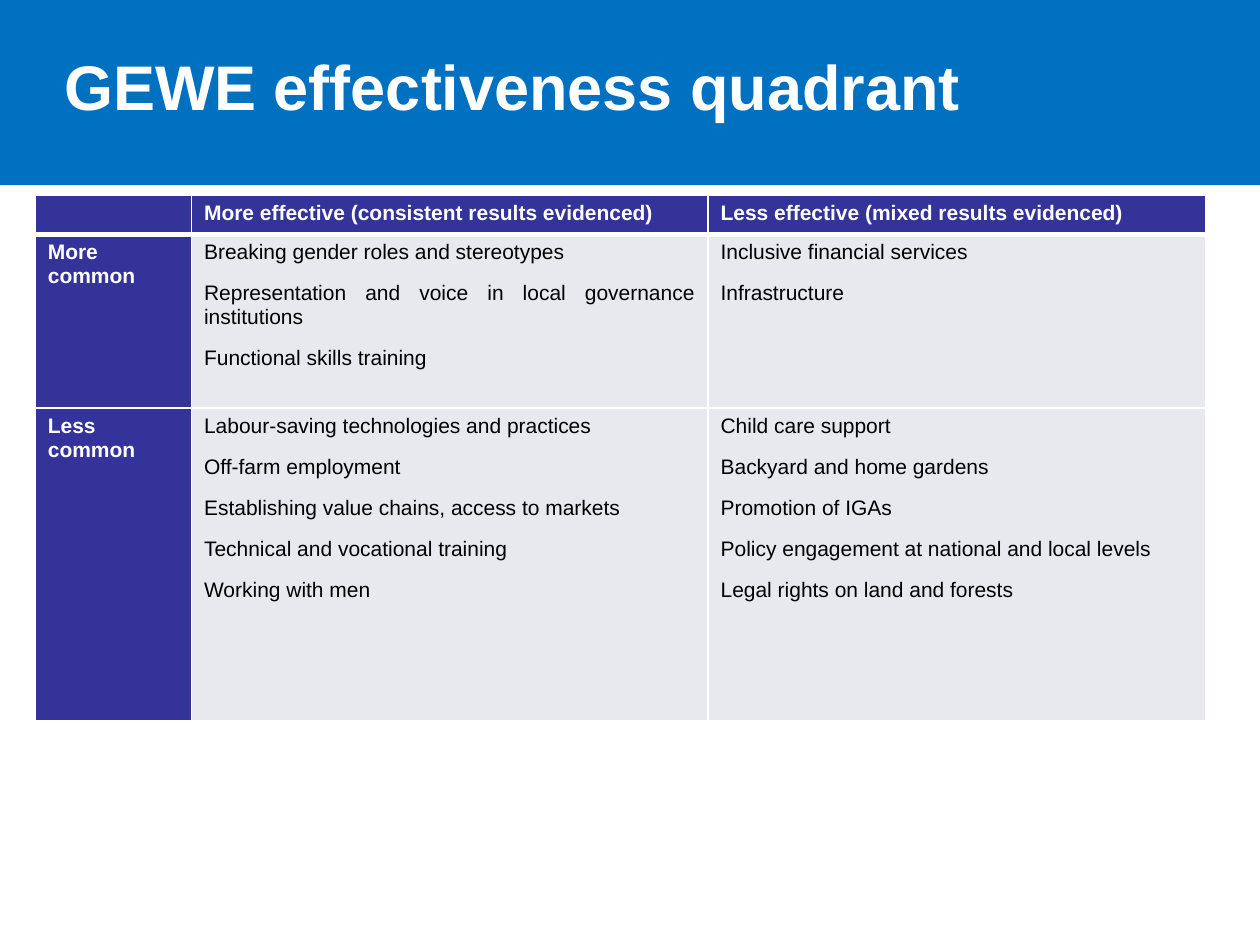
from lxml.etree import SubElement
from pptx import Presentation
from pptx.dml.color import RGBColor
from pptx.enum.shapes import MSO_SHAPE
from pptx.enum.text import MSO_ANCHOR, MSO_AUTO_SIZE, PP_ALIGN
from pptx.oxml.ns import qn
from pptx.util import Inches, Pt

COLORS = {
    "band": "0070C0",
    "header": "333399",
    "body": "E8E8EF",
    "white": "FFFFFF",
    "black": "000000",
}
FONT = "Arial"
COLUMN_WIDTHS = [1.24, 4.1, 3.95]
ROW_HEIGHTS = [0.31, 1.38, 2.48]
QUADRANT = [
    [
        [],
        ["More effective (consistent results evidenced)"],
        ["Less effective (mixed results evidenced)"],
    ],
    [
        ["More common"],
        [
            "Breaking gender roles and stereotypes",
            "Representation and voice in local governance institutions",
            "Functional skills training",
        ],
        ["Inclusive financial services", "Infrastructure"],
    ],
    [
        ["Less common"],
        [
            "Labour-saving technologies and practices",
            "Off-farm employment",
            "Establishing value chains, access to markets",
            "Technical and vocational training",
            "Working with men",
        ],
        [
            "Child care support",
            "Backyard and home gardens",
            "Promotion of IGAs",
            "Policy engagement at national and local levels",
            "Legal rights on land and forests",
        ],
    ],
]


def add_run(paragraph, text, size, color, bold):
    run = paragraph.add_run()
    run.text = text
    run.font.name = FONT
    run.font.size = Pt(size)
    run.font.bold = bold
    run.font.color.rgb = RGBColor.from_string(COLORS[color])


def set_borders(cell, bottom_width):
    """Draw white borders, 1 pt wide except for the bottom one."""
    properties = cell._tc.get_or_add_tcPr()
    for side, width in (("L", 1), ("R", 1), ("T", 1), ("B", bottom_width)):
        line = SubElement(properties, qn(f"a:ln{side}"), w=str(Pt(width)))
        fill = SubElement(line, qn("a:solidFill"))
        SubElement(fill, qn("a:srgbClr"), val=COLORS["white"])


prs = Presentation()
prs.slide_width, prs.slide_height = Inches(10), Inches(7.5)
slide = prs.slides.add_slide(prs.slide_layouts[5])

# Title band, sent behind the title
band = slide.shapes.add_shape(MSO_SHAPE.RECTANGLE, 0, 0, prs.slide_width, Inches(1.47))
band.shadow.inherit = False
band.fill.solid()
band.fill.fore_color.rgb = RGBColor.from_string(COLORS["band"])
band.line.fill.background()
slide.shapes._spTree.insert(2, band._element)

title = slide.shapes.title
title.left, title.top = Inches(0.51), Inches(0.21)
title.width, title.height = Inches(8.9), Inches(0.94)
title_frame = title.text_frame
title_frame.auto_size = MSO_AUTO_SIZE.NONE
title_frame.word_wrap = True
title_frame.vertical_anchor = MSO_ANCHOR.MIDDLE
title_frame.margin_left = title_frame.margin_right = 0
title_frame.margin_top = title_frame.margin_bottom = 0
heading = title_frame.paragraphs[0]
heading.alignment = PP_ALIGN.LEFT
add_run(heading, "GEWE effectiveness quadrant", 36, "white", True)

# Quadrant table
table = slide.shapes.add_table(
    len(ROW_HEIGHTS), len(COLUMN_WIDTHS), Inches(0.28), Inches(1.55),
    Inches(sum(COLUMN_WIDTHS)), Inches(sum(ROW_HEIGHTS)),
).table
table.first_col = True
for column, width in zip(table.columns, COLUMN_WIDTHS):
    column.width = Inches(width)
for row, height in zip(table.rows, ROW_HEIGHTS):
    row.height = Inches(height)

for r, row_entries in enumerate(QUADRANT):
    for c, entries in enumerate(row_entries):
        cell = table.cell(r, c)
        is_header = r == 0 or c == 0
        set_borders(cell, 3 if r == 0 else 1)
        cell.fill.solid()
        cell.fill.fore_color.rgb = RGBColor.from_string(
            COLORS["header" if is_header else "body"])
        frame = cell.text_frame
        if not entries:
            # Keeps the empty corner as low as the other headers
            SubElement(frame.paragraphs[0]._p, qn("a:endParaRPr"), sz="1200")
        for i, entry in enumerate(entries):
            paragraph = frame.paragraphs[0] if i == 0 else frame.add_paragraph()
            paragraph.alignment = PP_ALIGN.JUSTIFY
            paragraph.space_before = Pt(6 if i else 0)
            paragraph.space_after = Pt(4)
            add_run(paragraph, entry, 12, "white" if is_header else "black", is_header)

prs.save("out.pptx")
